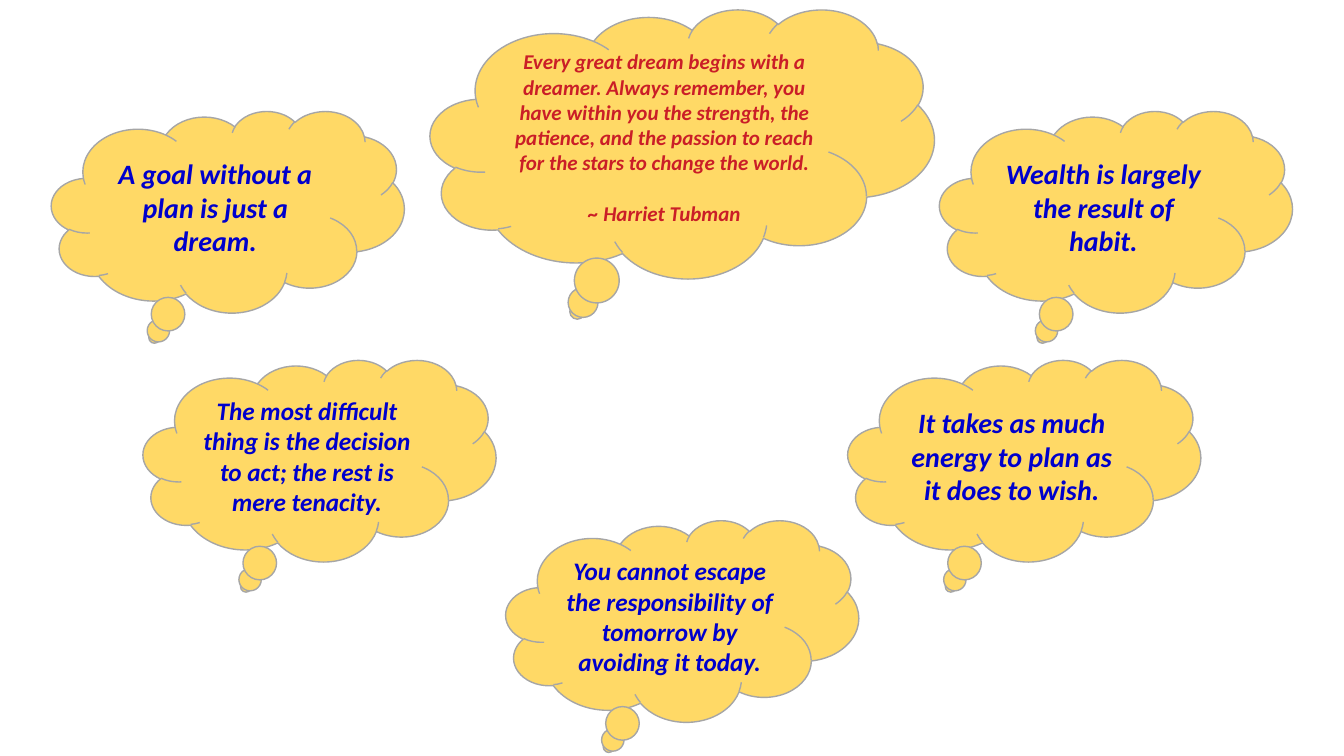
"""Build a slide of six thought clouds, each holding a quote."""
from dataclasses import dataclass

from pptx import Presentation
from pptx import util as u
from pptx.dml import color
from pptx.enum import shapes, text


@dataclass(frozen=True)
class Theme:
    font: str = "Calibri"
    fill: str = "FFD966"
    edge: str = "A6A6A6"
    blue: str = "0000CC"
    red: str = "CA1E27"
    large: float = 20
    mid: float = 18
    small: float = 15
    gap: float = 18.3


THEME = Theme()
WIDE, HIGH = 960, 540
CLOUD = (252, 144)
UPPER, LOWER = 79.2, 257
OUTER, INNER = 36.8, 102.3


def rgb(code):
    return color.RGBColor.from_string(code)


def add_run(para, words, size, ink):
    run = para.add_run()
    run.text = words
    font = run.font
    font.name, font.size = THEME.font, u.Pt(size)
    font.bold = font.italic = True
    font.color.rgb = rgb(ink)


def add_cloud(slide, spot, area, lines, size, ink=THEME.blue):
    box = [u.Pt(n) for n in (*spot, *area)]
    cloud = slide.shapes.add_shape(shapes.MSO_SHAPE.CLOUD_CALLOUT, *box)
    cloud.shadow.inherit = False
    cloud.fill.solid()
    cloud.fill.fore_color.rgb = rgb(THEME.fill)
    cloud.line.color.rgb = rgb(THEME.edge)
    cloud.line.width = u.Pt(1)
    frame = cloud.text_frame
    frame.word_wrap = True
    frame.vertical_anchor = text.MSO_ANCHOR.MIDDLE
    for i, words in enumerate(lines):
        para = frame.add_paragraph() if i else frame.paragraphs[0]
        para.alignment = text.PP_ALIGN.CENTER
        if i:
            para.space_before = u.Pt(THEME.gap)
        add_run(para, words, size, ink)


def main():
    deck = Presentation()
    deck.slide_width, deck.slide_height = u.Pt(WIDE), u.Pt(HIGH)
    slide = deck.slides.add_slide(deck.slide_layouts[6])
    right = WIDE - CLOUD[0]
    quotes = [
        (OUTER, UPPER, THEME.large, "A goal without a plan is just a dream."),
        (INNER, LOWER, THEME.mid,
         "The most difficult thing is the decision to act; the rest is mere tenacity."),
        (right - OUTER, UPPER, THEME.large, "Wealth is largely the result of habit."),
        (right - INNER, LOWER, THEME.large,
         "It takes as much energy to plan as it does to wish."),
        (361.4, 371.5, THEME.mid,
         "You cannot escape the responsibility of tomorrow by avoiding it today."),
    ]
    for left, top, size, words in quotes:
        add_cloud(slide, (left, top), CLOUD, [words], size)
    dream = [
        "Every great dream begins with a dreamer. Always remember, you have within "
        "you the strength, the patience, and the passion to reach for the stars "
        "to change the world.",
        "~ Harriet Tubman",
    ]
    add_cloud(slide, (307.4, 6.5), (360, 192.2), dream, THEME.small, THEME.red)
    deck.save("out.pptx")


if __name__ == "__main__":
    main()
